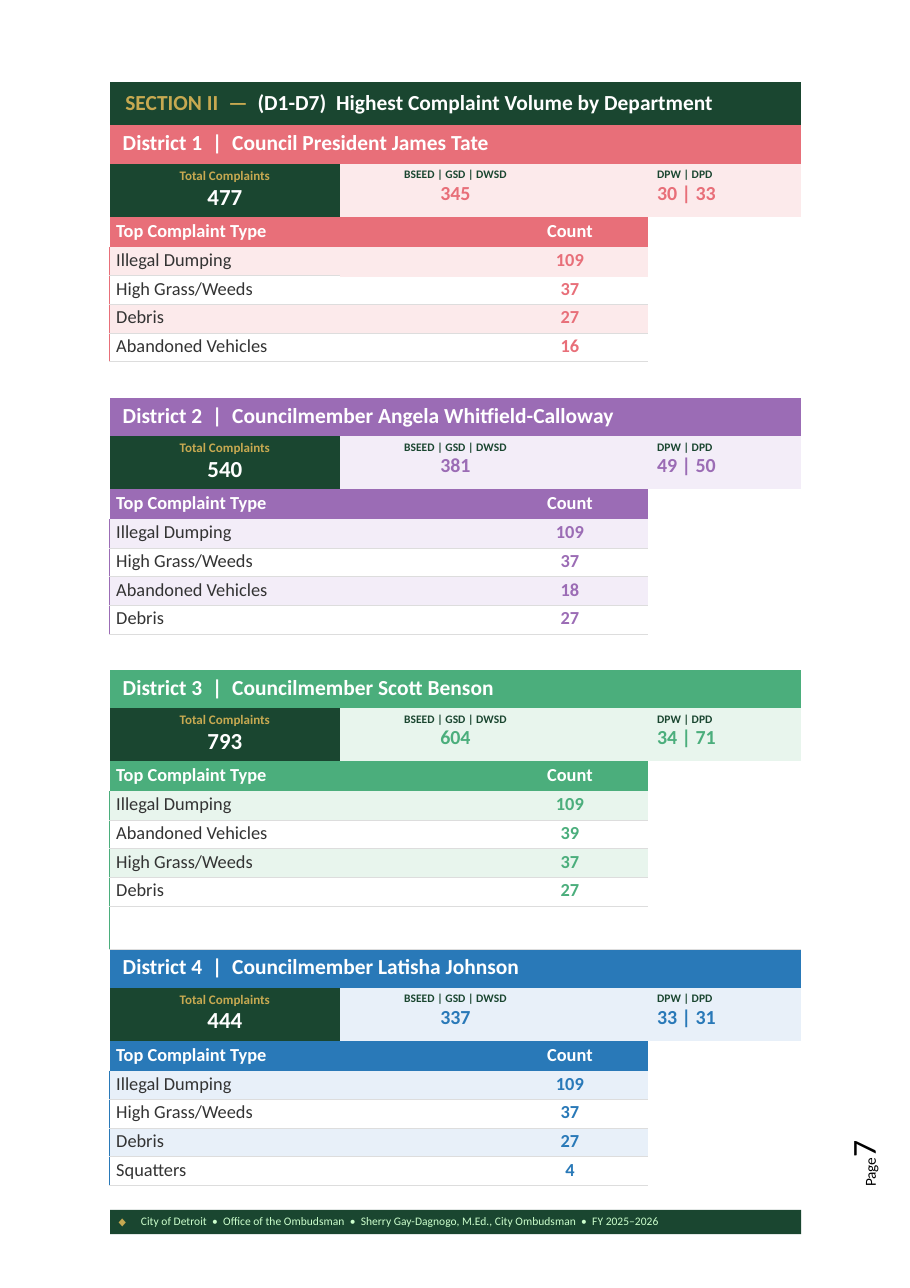
from lxml import etree
from pptx import Presentation
from pptx.dml.color import RGBColor
from pptx.enum.shapes import MSO_SHAPE
from pptx.enum.text import PP_ALIGN
from pptx.oxml.ns import qn
from pptx.util import Cm, Pt

CENTER = PP_ALIGN.CENTER
LEFT = PP_ALIGN.LEFT
RECT = MSO_SHAPE.RECTANGLE
FONT = "Calibri"
GREEN, GOLD, WHITE, INK, RULE = "1A4630", "C7A951", "FFFFFF", "333333", "DDDDDD"
PLAIN = "{2D5ABB26-0587-4C30-8999-92F81FD0307C}"
LEDGE = 2.53
COLS = [5.31, 7.09, 3.53]
HEAD, NAME, STATS, LABEL, ITEM, GAP = 0.99, 0.89, 1.22, 0.69, 0.66, 1.0
THIN = (RULE, 0.25)

ONE = ("District 1 | Council President James Tate", "E86F79", "FCEAEB",
       ["477", "345", "30 | 33"],
       [("Illegal Dumping", "109"), ("High Grass/Weeds", "37"),
        ("Debris", "27"), ("Abandoned Vehicles", "16")])
TWO = ("District 2 | Councilmember Angela Whitfield-Calloway", "9B6CB5", "F3EDF8",
       ["540", "381", "49 | 50"],
       [("Illegal Dumping", "109"), ("High Grass/Weeds", "37"),
        ("Abandoned Vehicles", "18"), ("Debris", "27")])
THREE = ("District 3 | Councilmember Scott Benson", "4BAE7C", "E8F5ED",
         ["793", "604", "34 | 71"],
         [("Illegal Dumping", "109"), ("Abandoned Vehicles", "39"),
          ("High Grass/Weeds", "37"), ("Debris", "27")])
FOUR = ("District 4 | Councilmember Latisha Johnson", "2979B8", "E8F0F9",
        ["444", "337", "33 | 31"],
        [("Illegal Dumping", "109"), ("High Grass/Weeds", "37"),
         ("Debris", "27"), ("Squatters", "4")])


def paint(color):
    return RGBColor.from_string(color)


def style(par, size, hue, bold=False, lead=None, face=FONT):
    font = par.font
    font.name, font.size, font.bold = face, Pt(size), bold
    font.color.rgb = paint(hue)
    if lead:
        par.line_spacing = Pt(lead)


def put(par, text, size, mark=" •"):
    runs = []
    for i, part in enumerate(text.split(mark)):
        for word in ([mark] if i else []) + [part]:
            run = par.add_run()
            run.text = word
            if word == mark:
                run._r.get_or_add_rPr().set("spc", str(round(size * 23)))
            runs.append(run)
    return runs


def border(cell, **sides):
    props = cell._tc.get_or_add_tcPr()
    for side in "LTB":
        if side in sides:
            hue, width = sides[side]
            line = etree.SubElement(props, qn("a:ln" + side), w=str(Pt(width)))
            solid = etree.SubElement(line, qn("a:solidFill"))
            etree.SubElement(solid, qn("a:srgbClr"), val=hue)


def back(cell, hue):
    if hue:
        cell.fill.solid()
        cell.fill.fore_color.rgb = paint(hue)
    else:
        cell.fill.background()


def write(cell, lines, top, left=0, right=0, align=LEFT, mark=" •"):
    cell.margin_top, cell.margin_left, cell.margin_right = Cm(top), Cm(left), Cm(right)
    frame = cell.text_frame
    for i, (text, size, hue, bold, lead) in enumerate(lines):
        par = frame.add_paragraph() if i else frame.paragraphs[0]
        par.alignment = align
        style(par, size, hue, bold, lead)
        put(par, text, size, mark)


def title(table):
    cell = table.cell(0, 0)
    cell.merge(table.cell(0, 2))
    back(cell, GREEN)
    cell.margin_top, cell.margin_left = Cm(0.17), Cm(0.36)
    par = cell.text_frame.paragraphs[0]
    style(par, 14, WHITE, True)
    for run in put(par, "SECTION II — ", 14, " —"):
        run.font.color.rgb = paint(GOLD)
    put(par, "(D1-D7) Highest Complaint Volume by Department", 14, ")")


def ward(table, row, data, seam, last):
    name, hue, soft, sums, items = data
    cell = table.cell(row, 0)
    cell.merge(table.cell(row, 2))
    back(cell, hue)
    write(cell, [(name, 14, WHITE, True, None)], 0.12, 0.3, mark=" |")

    total, main, works = (table.cell(row + 1, i) for i in range(3))
    back(total, GREEN)
    write(total, [("Total Complaints", 8.5, GOLD, True, 10.2),
                  (sums[0], 15, WHITE, True, 17.9)], 0.1, align=CENTER)
    for cell, label, value, left, right, align in (
            (main, "BSEED | GSD | DWSD", sums[1], 0, 1.77, CENTER),
            (works, "DPW | DPD", sums[2], 0.22, 0, LEFT)):
        back(cell, soft)
        write(cell, [(label, 7.5, GREEN, True, 8.9),
                     (value, 13, hue, True, 15.6)], 0.1, left, right, align)

    table.cell(row + 2, 2).merge(table.cell(last, 2))
    for i, pair in enumerate([("Top Complaint Type", "Count")] + items):
        kind, count = (table.cell(row + 2 + i, j) for j in range(2))
        if i:
            above = {"T": THIN} if i > 1 else {}
            border(kind, L=(hue, 0.75), B=THIN, **above)
            edge = {"T": seam} if i == 2 else above
            border(count, B=seam if i == 1 else THIN, **edge)
        shade = (soft if i % 2 else None) if i else hue
        back(kind, shade)
        back(count, shade)
        top = 0.05 if i else 0.07
        write(kind, [(pair[0], 12, INK if i else WHITE, not i, None)], top, 0.15)
        write(count, [(pair[1], 12, hue if i else WHITE, True, None)], top, 3.51, align=CENTER)


def section(slide, top, wards, head=False, seam=THIN):
    rows = [HEAD] if head else []
    spans = []
    for i, data in enumerate(wards):
        start = len(rows)
        rows += [NAME, STATS, LABEL] + [ITEM] * len(data[4])
        if i < len(wards) - 1:
            rows.append(GAP)
        spans.append((start, data, len(rows) - 1))
    table = slide.shapes.add_table(len(rows), len(COLS), Cm(LEDGE), Cm(top),
                                   Cm(sum(COLS)), Cm(sum(rows))).table
    table.first_row = table.horz_banding = False
    table._tbl.tblPr.find(qn("a:tableStyleId")).text = PLAIN
    for col, width in zip(table.columns, COLS):
        col.width = Cm(width)
    for row, height in zip(table.rows, rows):
        row.height = Cm(height)
    for cell in table.iter_cells():
        cell.margin_left = cell.margin_right = cell.margin_top = cell.margin_bottom = 0
    if head:
        title(table)
    for start, data, last in spans:
        ward(table, start, data, seam, last)
        if rows[last] == GAP:
            cell = table.cell(last, 0)
            cell.merge(table.cell(last, 1))
            border(cell, L=(data[1], 0.75), T=THIN, B=THIN)


def label(slide, left, top, width, height):
    box = slide.shapes.add_textbox(Cm(left), Cm(top), Cm(width), Cm(height))
    frame = box.text_frame
    frame.word_wrap = True
    frame.margin_left = frame.margin_right = frame.margin_top = frame.margin_bottom = 0
    return frame


def footer(slide, left, top, width, height):
    band = slide.shapes.add_shape(RECT, Cm(left), Cm(top), Cm(width), Cm(height))
    band.shadow.inherit = False
    band.fill.solid()
    band.fill.fore_color.rgb = paint(GREEN)
    band.line.fill.background()
    for shift, wide, text, size, hue, bold, lead, face in (
            (0.12, 0.35, "◆", 9, GOLD, True, 9.8, "Times New Roman"),
            (0.71, 14, "City of Detroit • Office of the Ombudsman • Sherry Gay-Dagnogo, M.Ed., "
             "City Ombudsman • FY 2025–2026", 7.5, "CCFFCC", False, 8.2, FONT)):
        par = label(slide, left + shift, top + 0.12, wide, 0.35).paragraphs[0]
        style(par, size, hue, bold, lead, face)
        put(par, text, size)


def folio(slide, left, top, width, height):
    frame = label(slide, left, top, width, height)
    frame._txBody.bodyPr.set("vert", "vert270")
    par = frame.paragraphs[0]
    style(par, 10, "000000", lead=26.1)
    put(par, "Page", 10)
    put(par, "7", 22)[0].font.size = Pt(22)


def main():
    deck = Presentation()
    deck.slide_width, deck.slide_height = Cm(20.98), Cm(29.69)
    slide = deck.slides.add_slide(deck.slide_layouts[6])
    footer(slide, 2.54, 27.89, 15.93, 0.56)
    folio(slide, 19.43, 26.19, 1.02, 1.17)
    section(slide, 1.9, [ONE], head=True, seam=(ONE[2], 3))
    section(slide, 9.17, [TWO])
    section(slide, 15.44, [THREE, FOUR])
    deck.save("out.pptx")


if __name__ == "__main__":
    main()
